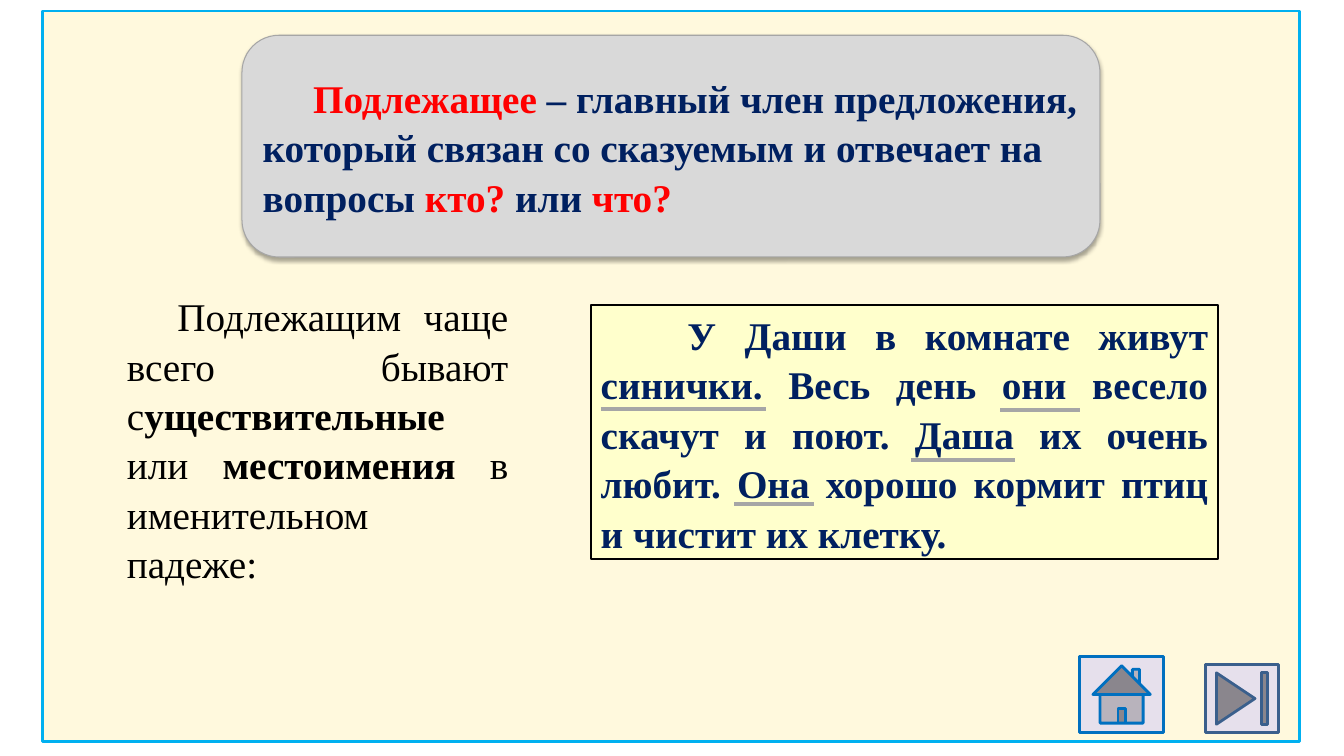
from dataclasses import dataclass

from lxml import etree
from pptx import Presentation
from pptx.dml.color import RGBColor
from pptx.enum.shapes import MSO_CONNECTOR, MSO_SHAPE
from pptx.enum.text import MSO_ANCHOR, PP_ALIGN
from pptx.oxml import parse_xml
from pptx.oxml.ns import nsdecls, qn
from pptx.shapes.base import BaseShape
from pptx.slide import Slide
from pptx.util import Inches, Pt

RECTANGLE = MSO_SHAPE.RECTANGLE
ROUNDED = MSO_SHAPE.ROUNDED_RECTANGLE
HOME = MSO_SHAPE.ACTION_BUTTON_HOME
END = MSO_SHAPE.ACTION_BUTTON_END
STRAIGHT = MSO_CONNECTOR.STRAIGHT
TOP, MIDDLE = MSO_ANCHOR.TOP, MSO_ANCHOR.MIDDLE
LEFT, JUSTIFY = PP_ALIGN.LEFT, PP_ALIGN.JUSTIFY

FONT = "Times New Roman"
TEXT_SIZE = 28
COLORS = {
    "cream": "FFF9DD",
    "sky": "00B0F0",
    "silver": "D9D9D9",
    "gray": "A6A6A6",
    "red": "FF0000",
    "navy": "002060",
    "black": "000000",
    "yellow": "FFFFCC",
    "lilac": "E6E0EC",
    "steel": "3A5F8C",
    "blue": "0070C0",
}


@dataclass(frozen=True)
class Panel:
    kind: MSO_SHAPE
    left: float
    top: float
    width: float
    height: float
    fill: str
    line: str
    weight: float


@dataclass(frozen=True)
class Span:
    text: str
    color: str
    bold: bool = True


@dataclass(frozen=True)
class Underline:
    left: float
    right: float
    top: float


FRAME = Panel(RECTANGLE, 0.42, 0.11, 12.47, 7.25, "cream", "sky", 2)
DEFINITION = Panel(ROUNDED, 2.4, 0.35, 8.51, 2.2, "silver", "gray", 0.75)
EXAMPLE = Panel(RECTANGLE, 5.86, 3.03, 6.22, 2.52, "yellow", "black", 1.5)
BUTTONS = [
    Panel(END, 11.96, 6.59, 0.72, 0.68, "lilac", "steel", 2),
    Panel(HOME, 10.71, 6.51, 0.83, 0.76, "lilac", "blue", 2),
]
DEFINITION_SPANS = [
    Span("Подлежащее ", "red"),
    Span("– главный член предложения, который связан со сказуемым "
         "и отвечает на вопросы ", "navy"),
    Span("кто? ", "red"),
    Span("или ", "navy"),
    Span("что?", "red"),
]
RULE_SPANS = [
    Span("Подлежащим чаще всего бывают с", "black", False),
    Span("уществительные ", "black"),
    Span("или ", "black", False),
    Span("местоимения ", "black"),
    Span("в именительном падеже:", "black", False),
]
EXAMPLE_SPANS = [
    Span("У Даши в комнате живут синички. Весь день они весело скачут и поют. "
         "Даша их очень любит. Она хорошо кормит птиц и чистит их клетку.", "navy"),
]
UNDERLINES = [
    Underline(5.96, 7.6, 4.06),
    Underline(9.92, 10.71, 4.07),
    Underline(9.04, 10.07, 4.56),
    Underline(7.28, 8.07, 5),
]


def color(name: str) -> RGBColor:
    return RGBColor.from_string(COLORS[name])


def draw_panel(slide: Slide, panel: Panel) -> BaseShape:
    shape = slide.shapes.add_shape(
        panel.kind, Inches(panel.left), Inches(panel.top),
        Inches(panel.width), Inches(panel.height))
    shape.shadow.inherit = False
    shape.fill.solid()
    shape.fill.fore_color.rgb = color(panel.fill)
    shape.line.color.rgb = color(panel.line)
    shape.line.width = Pt(panel.weight)
    return shape


def cast_shadow(shape: BaseShape) -> None:
    effects = shape._element.spPr.find(qn("a:effectLst"))
    effects.append(parse_xml(
        f'<a:outerShdw {nsdecls("a")} blurRad="{Pt(3.1)}" dist="{Pt(1.8)}" '
        f'dir="5400000" rotWithShape="0"><a:srgbClr val="{COLORS["black"]}">'
        '<a:alpha val="35000"/></a:srgbClr></a:outerShdw>'))


def write(box: BaseShape, spans: list[Span], align: PP_ALIGN,
          anchor: MSO_ANCHOR, indent: float, spacing: float = 1.05) -> None:
    frame = box.text_frame
    frame.word_wrap = True
    frame.vertical_anchor = anchor
    para = frame.paragraphs[0]
    para.alignment = align
    para.line_spacing = spacing
    para._p.get_or_add_pPr().set("indent", str(Inches(indent)))
    for span in spans:
        run = para.add_run()
        run.text = span.text
        run.font.name = FONT
        run.font.size = Pt(TEXT_SIZE)
        run.font.bold = span.bold
        run.font.color.rgb = color(span.color)


def draw_underline(slide: Slide, underline: Underline) -> None:
    line = slide.shapes.add_connector(
        STRAIGHT, Inches(underline.left), Inches(underline.top),
        Inches(underline.right), Inches(underline.top))
    line.line.color.rgb = color("gray")
    line.line.width = Pt(3)
    etree.SubElement(line._element.spPr, qn("a:effectLst"))


def main() -> None:
    deck = Presentation()
    deck.slide_width, deck.slide_height = Inches(13.33), Inches(7.5)
    slide = deck.slides.add_slide(deck.slide_layouts[6])

    draw_panel(slide, FRAME)
    definition = draw_panel(slide, DEFINITION)
    cast_shadow(definition)
    write(definition, DEFINITION_SPANS, LEFT, MIDDLE, 0.5)

    rule = slide.shapes.add_textbox(
        Inches(1.16), Inches(2.83), Inches(3.98), Inches(2.93))
    write(rule, RULE_SPANS, JUSTIFY, TOP, 0.5)

    example = draw_panel(slide, EXAMPLE)
    write(example, EXAMPLE_SPANS, JUSTIFY, MIDDLE, 0.86)

    for underline in UNDERLINES:
        draw_underline(slide, underline)
    for button in BUTTONS:
        draw_panel(slide, button)
    deck.save("out.pptx")


if __name__ == "__main__":
    main()
